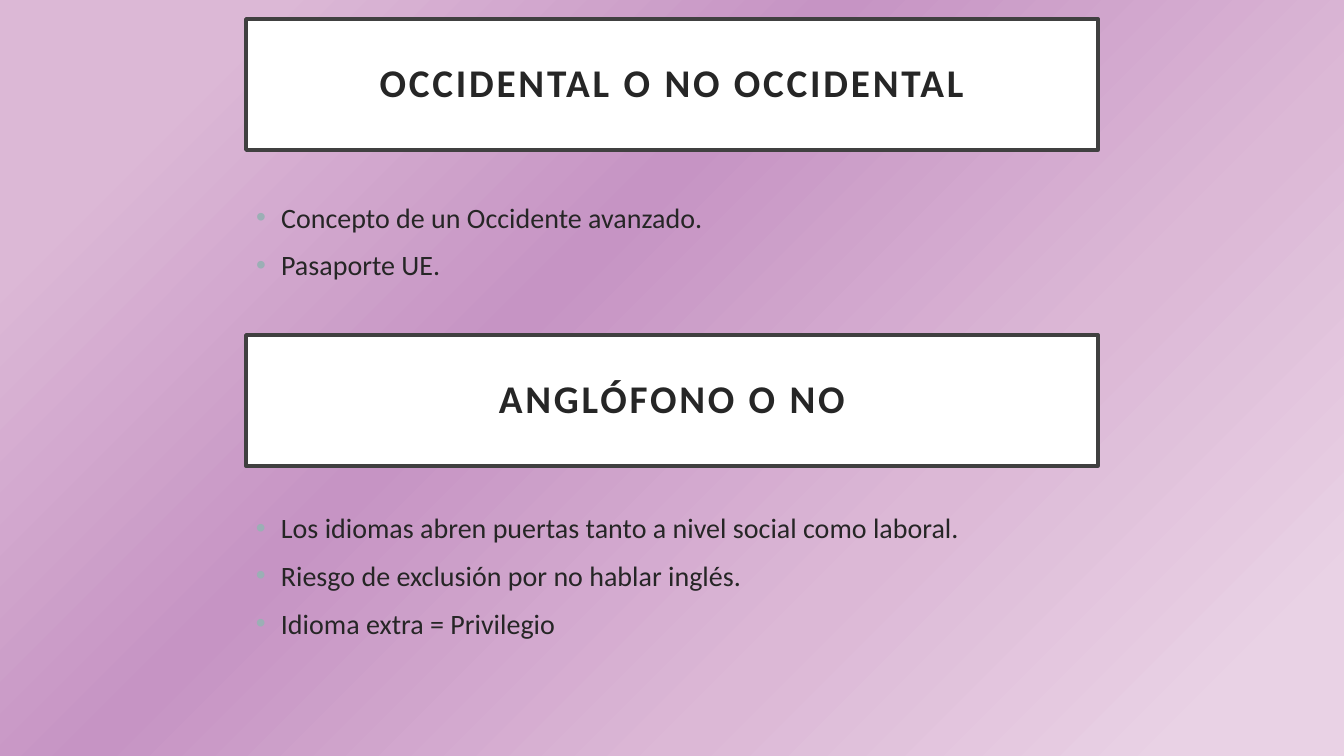
from lxml.etree import SubElement
from pptx import Presentation
from pptx.dml.color import RGBColor
from pptx.enum.shapes import MSO_SHAPE
from pptx.enum.text import MSO_ANCHOR, MSO_AUTO_SIZE, PP_ALIGN
from pptx.oxml.ns import qn
from pptx.util import Pt

EMU_PER_PX = 914400 / 100.8
SLIDE_W, SLIDE_H = 1344, 756
COLUMN_X, COLUMN_W = 246, 852
HEADING_H, LIST_H = 131, 342
FONT, INK, FRAME, BULLET = "Calibri", "262626", "404040", "9BAFB5"
GRADIENT = [(8, "E9D2E5"), (32, "DCB8D6"), (60, "C694C4"), (87, "DCB8D6")]


def px(length):
    return round(length * EMU_PER_PX)


def rgb(value):
    return RGBColor.from_string(value)


def place(part, x, y, w, h):
    part.left, part.top, part.width, part.height = px(x), px(y), px(w), px(h)


def paint_background(slide):
    slide.background.fill.solid()
    properties = next(slide.element.iter(qn("p:bgPr")))
    properties.remove(properties[0])
    gradient = SubElement(properties, qn("a:gradFill"), rotWithShape="1")
    properties.insert(0, gradient)
    stops = SubElement(gradient, qn("a:gsLst"))
    for position, color in GRADIENT:
        stop = SubElement(stops, qn("a:gs"), pos=str(position * 1000))
        SubElement(stop, qn("a:srgbClr"), val=color)
    circle = SubElement(gradient, qn("a:path"), path="circle")
    SubElement(circle, qn("a:fillToRect"), l="100000", t="100000")
    SubElement(gradient, qn("a:tileRect"), r="-100000", b="-100000")


def add_run(paragraph, text, size, bold=False):
    run = paragraph.add_run()
    run.text = text
    font = run.font
    font.name, font.size, font.bold = FONT, Pt(size), bold
    font.color.rgb = rgb(INK)
    return run


def fill_heading(heading, y, text):
    place(heading, COLUMN_X, y, COLUMN_W, HEADING_H)
    heading.fill.solid()
    heading.fill.fore_color.rgb = rgb("FFFFFF")
    heading.line.color.rgb = rgb(FRAME)
    heading.line.width = Pt(2.5)
    frame = heading.text_frame
    frame.word_wrap = True
    frame.auto_size = MSO_AUTO_SIZE.NONE
    frame.vertical_anchor = MSO_ANCHOR.MIDDLE
    frame.margin_left = frame.margin_right = px(20)
    frame.margin_top = frame.margin_bottom = px(20)
    paragraph = frame.paragraphs[0]
    paragraph.alignment = PP_ALIGN.CENTER
    paragraph.line_spacing = 0.9
    run = add_run(paragraph, text, 28, bold=True)
    run.font._element.set("spc", "200")


def fill_list(points, y, lines):
    place(points, COLUMN_X, y, COLUMN_W, LIST_H)
    frame = points.text_frame
    frame.word_wrap = True
    frame.auto_size = MSO_AUTO_SIZE.NONE
    frame.vertical_anchor = MSO_ANCHOR.TOP
    for index, line in enumerate(lines):
        paragraph = frame.add_paragraph() if index else frame.paragraphs[0]
        paragraph.space_before = Pt(10 if index else 0)
        properties = paragraph._p.get_or_add_pPr()
        properties.set("marL", str(px(25)))
        properties.set("indent", str(px(-25)))
        bullet_color = SubElement(properties, qn("a:buClr"))
        SubElement(bullet_color, qn("a:srgbClr"), val=BULLET)
        SubElement(properties, qn("a:buFont"), typeface="Arial")
        SubElement(properties, qn("a:buChar"), char="•")
        add_run(paragraph, line, 20)


def build_western_section(slide, y):
    fill_heading(slide.shapes.title, y, "OCCIDENTAL O NO OCCIDENTAL")
    fill_list(slide.placeholders[1], y + 176, [
        "Concepto de un Occidente avanzado.",
        "Pasaporte UE.",
    ])


def build_language_section(slide, y):
    language_points = slide.shapes.add_textbox(0, 0, px(COLUMN_W), px(LIST_H))
    fill_list(language_points, y + 171, [
        "Los idiomas abren puertas tanto a nivel social como laboral.",
        "Riesgo de exclusión por no hablar inglés.",
        "Idioma extra = Privilegio",
    ])
    language_heading = slide.shapes.add_shape(
        MSO_SHAPE.RECTANGLE, 0, 0, px(COLUMN_W), px(HEADING_H))
    language_heading.shadow.inherit = False
    fill_heading(language_heading, y, "ANGLÓFONO O NO")


def main():
    presentation = Presentation()
    presentation.slide_width = px(SLIDE_W)
    presentation.slide_height = px(SLIDE_H)
    slide = presentation.slides.add_slide(presentation.slide_layouts[1])
    paint_background(slide)
    build_western_section(slide, 19)
    build_language_section(slide, 335)
    presentation.save("out.pptx")


if __name__ == "__main__":
    main()
